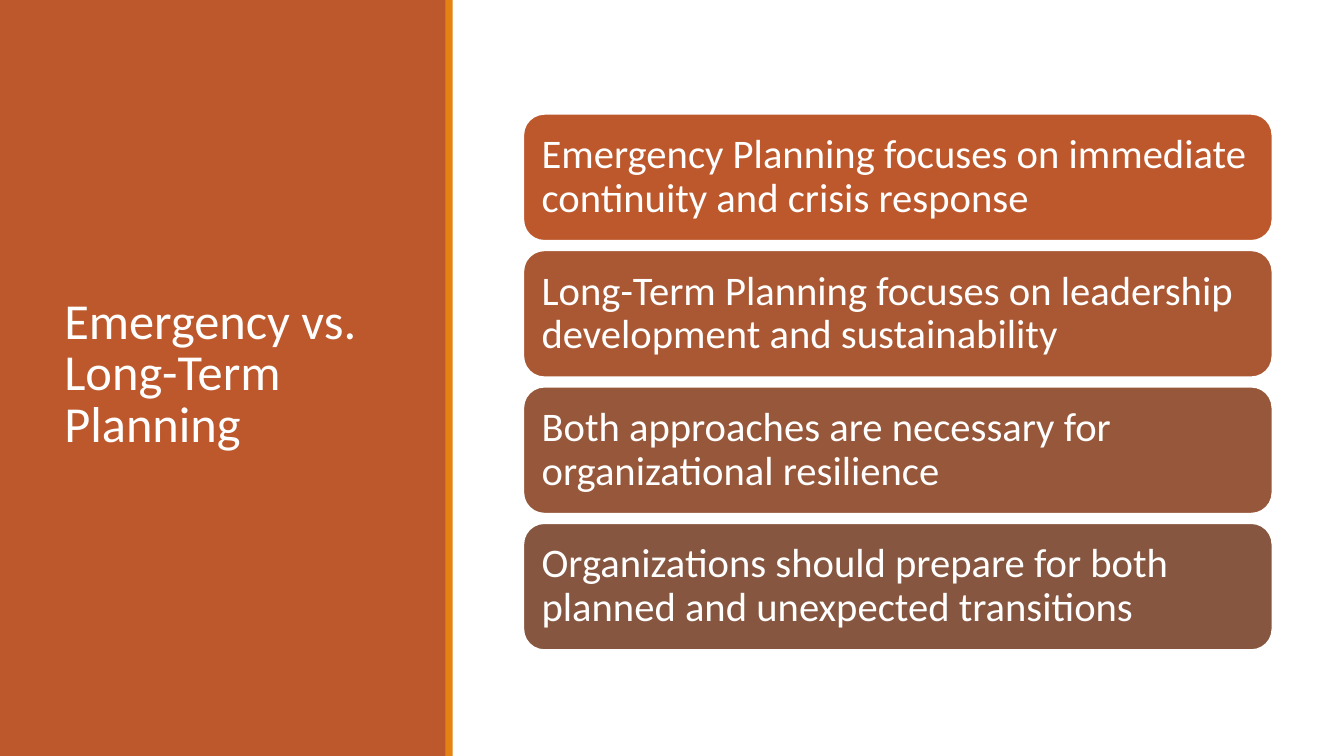
from pptx import Presentation
from pptx.dml.color import RGBColor
from pptx.enum.shapes import MSO_SHAPE as Shape
from pptx.enum.text import MSO_ANCHOR as Anchor, PP_ALIGN as Align
from pptx.util import Inches, Pt

WHITE = RGBColor(0xFF, 0xFF, 0xFF)
RUST = RGBColor(0xBD, 0x58, 0x2C)
AMBER = RGBColor(0xE4, 0x83, 0x12)
CLAY = RGBColor(0xAA, 0x58, 0x34)
UMBER = RGBColor(0x97, 0x57, 0x3A)
COCOA = RGBColor(0x86, 0x56, 0x40)

COLUMNS, ROWS = 160, 90
FIRST_CARD, CARD_PITCH = 13.56, 16.24

POINTS = [
    ("Emergency Planning focuses on immediate continuity and crisis response", RUST),
    ("Long-Term Planning focuses on leadership development and sustainability", CLAY),
    ("Both approaches are necessary for organizational resilience", UMBER),
    ("Organizations should prepare for both planned and unexpected transitions", COCOA),
]


class PlanningSlide:
    font = "Calibri"
    ink = WHITE

    def __init__(self, deck):
        self.column = deck.slide_width / COLUMNS
        self.row = deck.slide_height / ROWS
        self.slide = deck.slides.add_slide(deck.slide_layouts[6])
        background = self.slide.background.fill
        background.solid()
        background.fore_color.rgb = WHITE

    def place(self, left, top, width, height):
        return (round(left * self.column), round(top * self.row),
                round(width * self.column), round(height * self.row))

    def add_words(self, holder, words, size, spacing, inset):
        frame = holder.text_frame
        frame.word_wrap = True
        frame.vertical_anchor = Anchor.MIDDLE
        frame.margin_left = frame.margin_right = Inches(inset)
        frame.margin_top = frame.margin_bottom = Inches(inset)
        paragraph = frame.paragraphs[0]
        paragraph.alignment = Align.LEFT
        paragraph.line_spacing = spacing
        run = paragraph.add_run()
        run.text = words
        run.font.name = self.font
        run.font.size = Pt(size)
        run.font.color.rgb = self.ink

    def block(self, area, color, outline=Shape.RECTANGLE):
        block = self.slide.shapes.add_shape(outline, *self.place(*area))
        block.shadow.inherit = False
        block.fill.solid()
        block.fill.fore_color.rgb = color
        block.line.fill.background()
        return block

    def title(self, area, words):
        heading = self.slide.shapes.add_textbox(*self.place(*area))
        self.add_words(heading, words, size=36, spacing=0.85, inset=0.1)

    def card(self, area, words, color):
        card = self.block(area, color, Shape.ROUNDED_RECTANGLE)
        card.line.color.rgb = WHITE
        card.line.width = Pt(1.25)
        self.add_words(card, words, size=29, spacing=0.9, inset=0.12)


def main():
    deck = Presentation()
    deck.slide_width, deck.slide_height = Inches(13.33), Inches(7.5)
    page = PlanningSlide(deck)
    page.block((0, 0, 53.16, ROWS), RUST)
    page.title((6.48, 6.84, 40.44, 75.72), "Emergency vs. Long-Term Planning")
    page.block((53.04, 0, 0.84, ROWS), AMBER)
    for index, (point, color) in enumerate(POINTS):
        page.card((62.3, FIRST_CARD + index * CARD_PITCH, 89.18, 15.12), point, color)
    deck.save("out.pptx")


if __name__ == "__main__":
    main()
